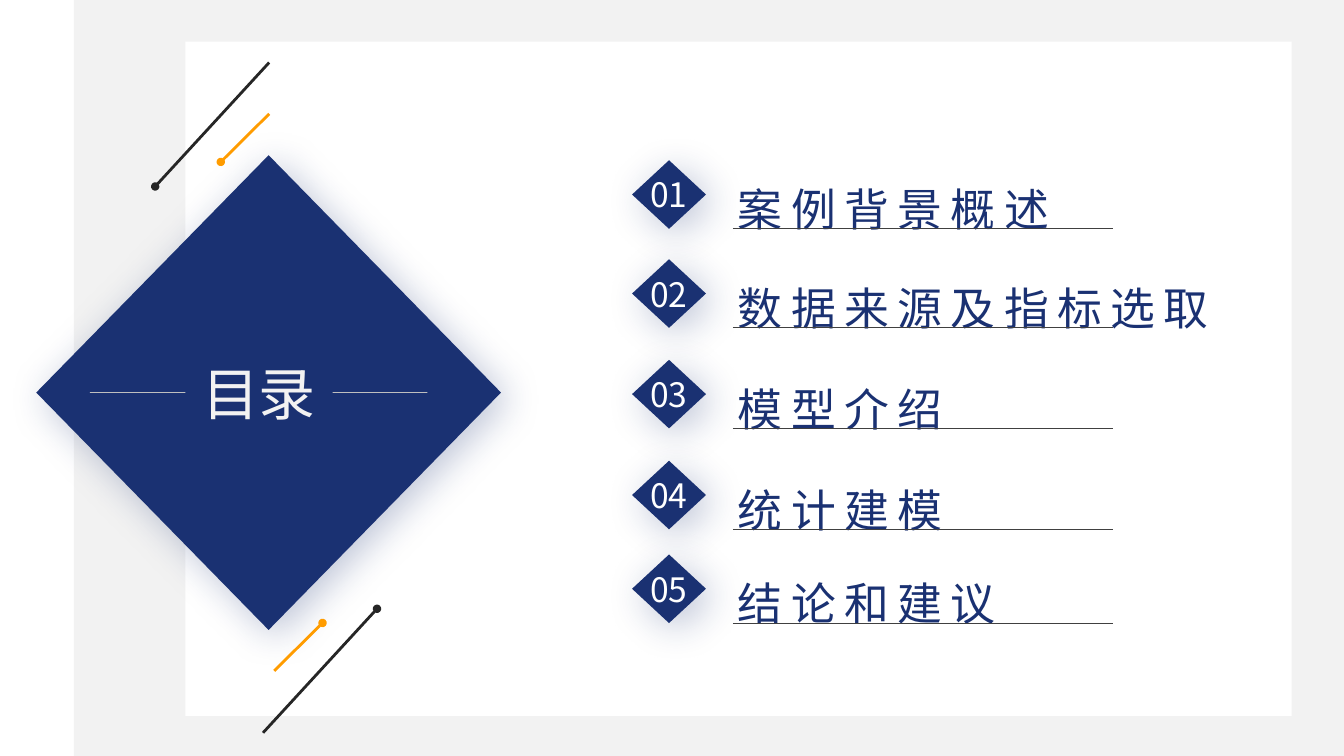
from dataclasses import dataclass

from lxml.etree import SubElement
from pptx import Presentation
from pptx.dml.color import RGBColor
from pptx.enum.shapes import MSO_CONNECTOR, MSO_SHAPE
from pptx.enum.text import MSO_ANCHOR, MSO_AUTO_SIZE, PP_ALIGN
from pptx.oxml.ns import qn
from pptx.util import Inches, Pt


@dataclass(frozen=True)
class Theme:
    """Slide size, colours, fonts and type sizes."""
    width: int = Inches(13.33)
    height: int = Inches(7.5)
    navy: str = "1A3172"
    orange: str = "FF9C00"
    ink: str = "262626"
    rule: str = "404040"
    silver: str = "BFBFBF"
    mist: str = "F2F2F2"
    white: str = "FFFFFF"
    title_font: str = "Arial"
    font: str = "Noto Sans CJK JP"
    title_size: float = 40.7
    entry_size: float = 32
    number_size: float = 24


@dataclass(frozen=True)
class Box:
    """An area in percent of the slide's width and height."""
    x: float
    y: float
    w: float
    h: float

    def sub(self, dx, dy, w, h):
        """Return an area offset from this one's corner."""
        return Box(self.x + dx, self.y + dy, w, h)

    def point(self, dx, dy):
        """Return a point offset from the corner, in slide units."""
        return across(self.x + dx), down(self.y + dy)

    def emu(self):
        """Return left, top, width and height in slide units."""
        return across(self.x), down(self.y), across(self.w), down(self.h)


T = Theme()
ENTRIES = [
    (21.2, "案例背景概述"),
    (34.3, "数据来源及指标选取"),
    (47.6, "模型介绍"),
    (60.95, "统计建模"),
    (73.35, "结论和建议"),
]


def across(share):
    """Turn a percentage of the width into slide units."""
    return round(T.width * share / 100)


def down(share):
    """Turn a percentage of the height into slide units."""
    return round(T.height * share / 100)


def rgb(color):
    """Return a colour object for a hex value."""
    return RGBColor.from_string(color)


def add_block(shapes, kind, box, color):
    """Add a plain filled shape without outline or shadow."""
    sp = shapes.add_shape(kind, *box.emu())
    sp.shadow.inherit = False
    sp.fill.solid()
    sp.fill.fore_color.rgb = rgb(color)
    sp.line.fill.background()
    return sp


def add_diamond(shapes, box):
    """Add a navy diamond with a soft navy shadow."""
    sp = add_block(shapes, MSO_SHAPE.DIAMOND, box, T.navy)
    effects = sp.element.spPr.find(qn("a:effectLst"))
    shadow = SubElement(effects, qn("a:outerShdw"), blurRad=str(Pt(28)),
                        dist=str(Pt(7)), dir="2700000", algn="tl", rotWithShape="0")
    tint = SubElement(shadow, qn("a:srgbClr"), val=T.navy)
    SubElement(tint, qn("a:alpha"), val="27000")
    return sp


def add_line(shapes, start, end, color, width, dot=None):
    """Add a straight line, with a round dot at the named end if any."""
    line = shapes.add_connector(MSO_CONNECTOR.STRAIGHT, *start, *end)
    line.line.color.rgb = rgb(color)
    line.line.width = Pt(width)
    if dot:
        SubElement(line.line._get_or_add_ln(), qn(dot), type="oval")
    SubElement(line.element.spPr, qn("a:effectLst"))
    return line


def set_text(sp, text, size, color, font, align=PP_ALIGN.CENTER, anchor=MSO_ANCHOR.MIDDLE):
    """Write one unwrapped run and return its paragraph and run."""
    tf = sp.text_frame
    tf.word_wrap = False
    tf.auto_size = MSO_AUTO_SIZE.NONE
    tf.vertical_anchor = anchor
    p = tf.paragraphs[0]
    p.alignment = align
    r = p.add_run()
    r.text = text
    r.font.size = Pt(size)
    r.font.name = font
    r.font.color.rgb = rgb(color)
    SubElement(r.font._element, qn("a:ea"), typeface=font)
    return p, r


def draw_backdrop(s, box):
    """Draw the white strip, the grey ground and the white panel."""
    for area, color in [
        (box.sub(0, 0, 5.5, box.h), T.white),
        (box.sub(5.5, 0, box.w - 5.5, box.h), T.mist),
        (box.sub(13.8, 5.5, 82.3, 89.2), T.white),
    ]:
        add_block(s.shapes, MSO_SHAPE.RECTANGLE, area, color)


def draw_emblem(s, box):
    """Draw the large diamond with the title between two fine lines."""
    add_diamond(s.shapes, box)
    title = s.shapes.title
    title.left, title.top, title.width, title.height = box.sub(11.1, 26.67, 10.95, 9.47).emu()
    set_text(title, "目录", T.title_size, T.mist, T.title_font)
    title.element.getparent().append(title.element)
    for side, near, far in [(1, 11.1, 3.98), (3, 22.05, 29.1)]:
        mid = box.h / 2
        line = add_line(s.shapes, box.point(near, mid), box.point(far, mid), T.silver, 0.5)
        line.begin_connect(title, side)


def draw_accents(s, box):
    """Draw a dark and an orange slanted line above and below the emblem."""
    for x, y, dx, dy, color, dot in [
        (20.03, 8.27, 8.48, 16.4, T.ink, "a:tailEnd"),
        (20.03, 15.07, 3.6, 6.35, T.orange, "a:tailEnd"),
        (28.05, 80.53, 8.48, 16.4, T.ink, "a:headEnd"),
        (24, 82.4, 3.6, 6.35, T.orange, "a:headEnd"),
    ]:
        add_line(s.shapes, box.point(x, y), box.point(x - dx, y + dy), color, 2, dot)


def draw_entry(s, box, number, text):
    """Draw one numbered contents entry with its underline."""
    shapes = s.shapes.add_group_shape().shapes
    badge = add_diamond(shapes, box.sub(0, 0, 5.5, box.h))
    set_text(badge, f"{number:02}", T.number_size, T.white, T.font)
    label = shapes.add_textbox(*box.sub(7.13, -1.35, 29.18, 8.8).emu())
    p, r = set_text(label, text, T.entry_size, T.navy, T.font, PP_ALIGN.LEFT, MSO_ANCHOR.TOP)
    p.line_spacing = 1.5
    r.font._element.set("spc", "600")
    add_line(shapes, box.point(7.5, box.h), box.point(box.w, box.h), T.rule, 0.5)


def main():
    """Build the contents slide."""
    prs = Presentation()
    prs.slide_width, prs.slide_height = T.width, T.height
    s = prs.slides.add_slide(prs.slide_layouts[5])
    s.background.fill.solid()
    s.background.fill.fore_color.rgb = rgb(T.mist)
    page = Box(0, 0, 100, 100)
    draw_backdrop(s, page)
    draw_emblem(s, page.sub(2.7, 20.53, 34.58, 62.8))
    draw_accents(s, page)
    for number, (y, text) in enumerate(ENTRIES, 1):
        draw_entry(s, page.sub(47.03, y, 35.78, 9.07), number, text)
    prs.save("out.pptx")


if __name__ == "__main__":
    main()
